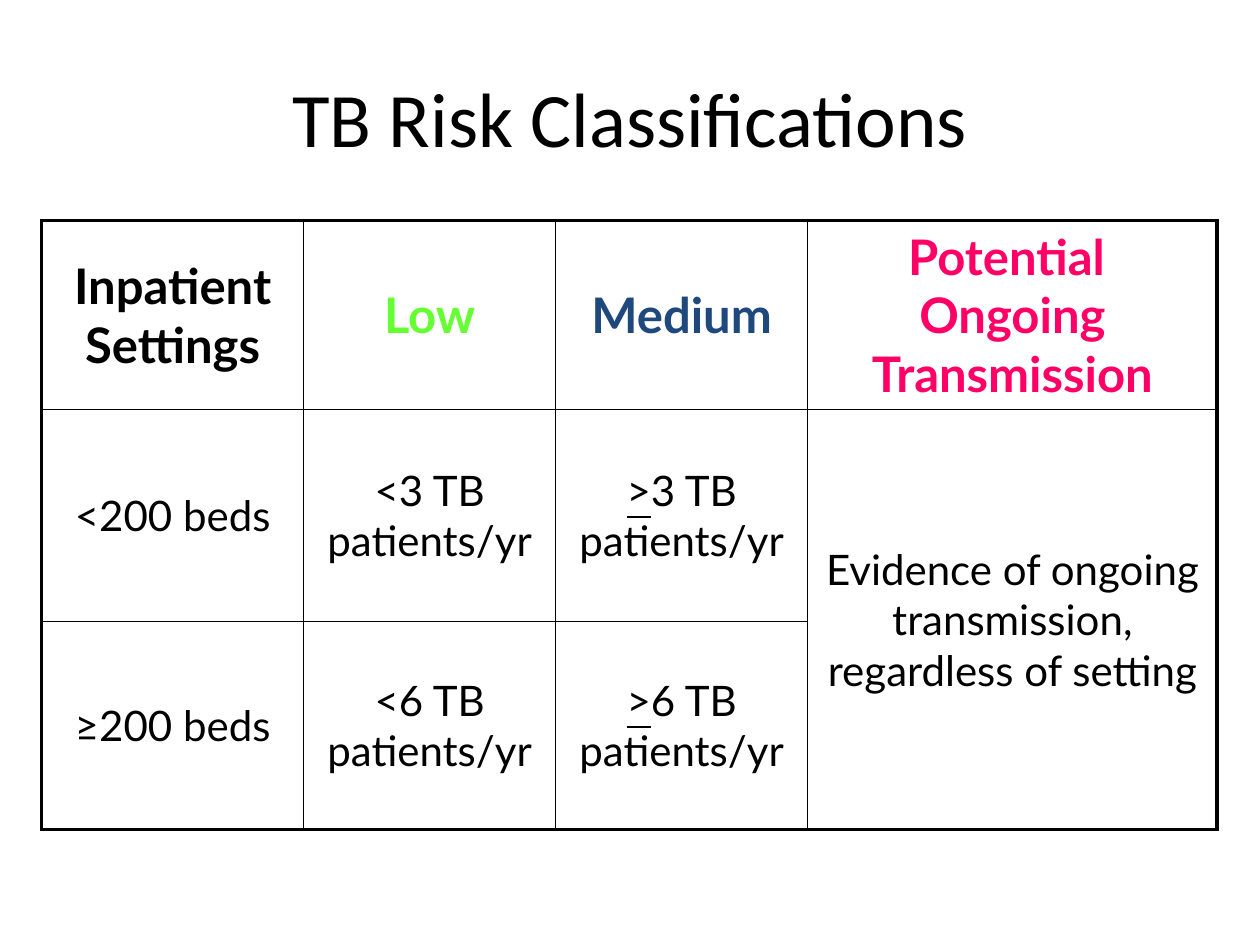
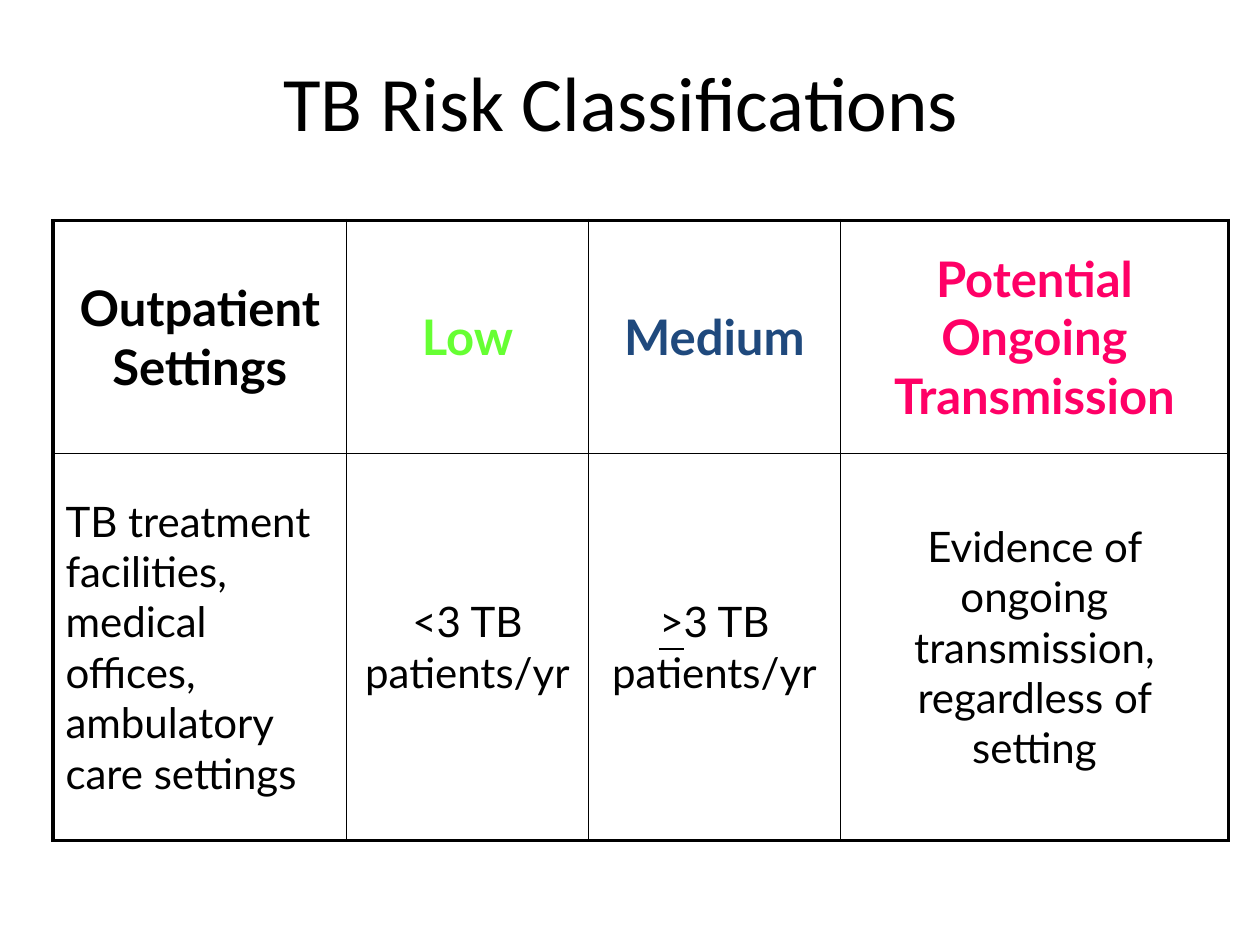
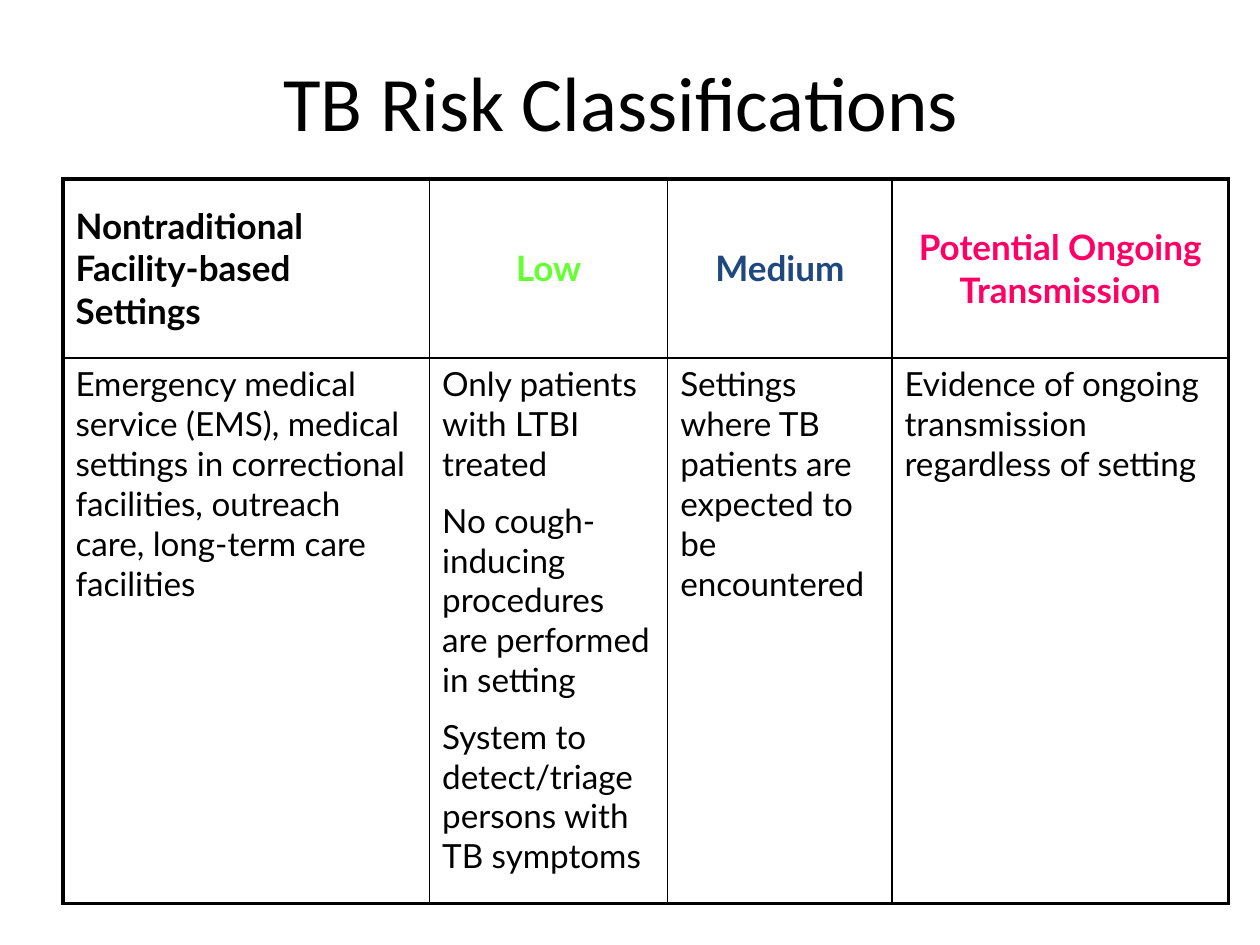
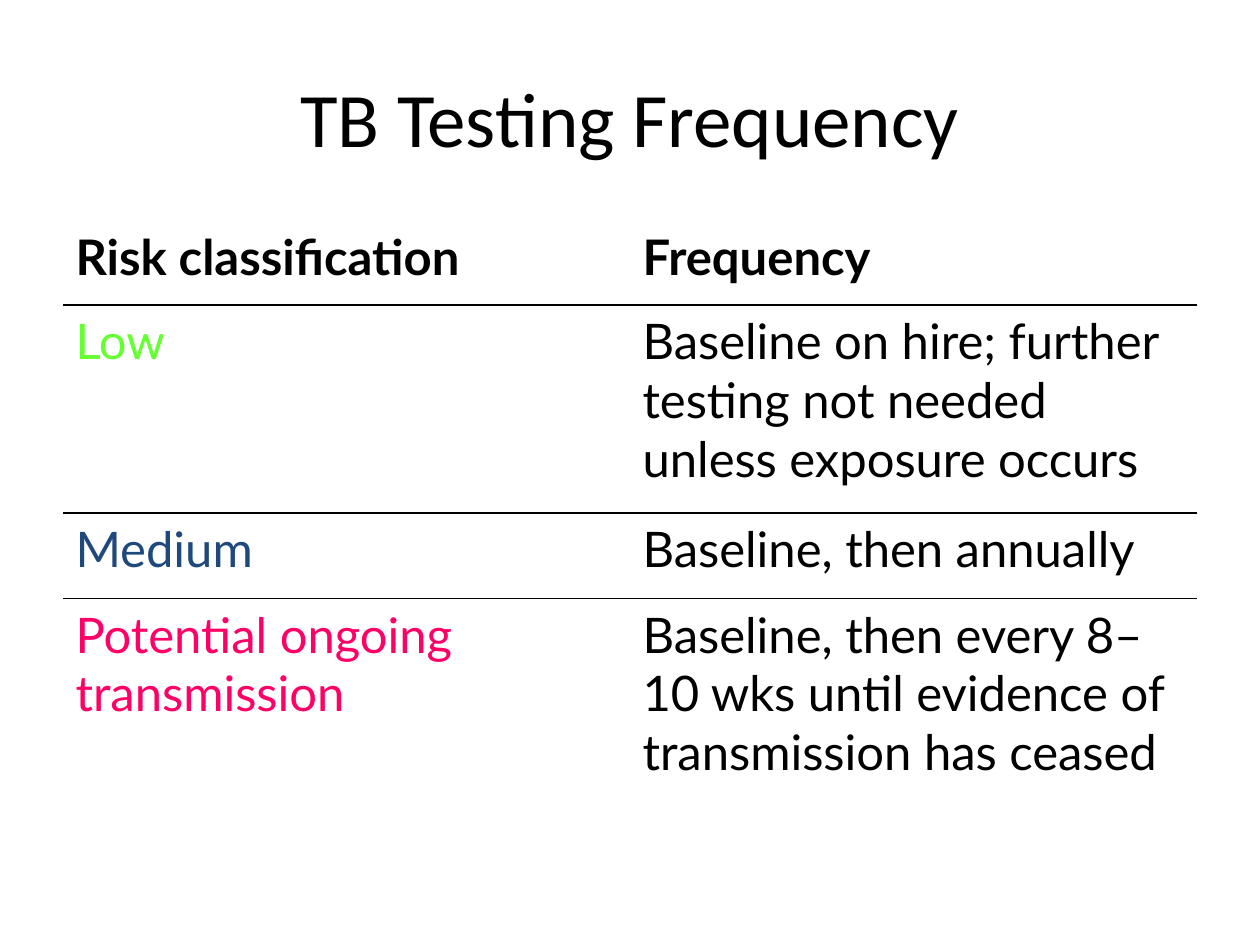
from lxml import etree
from pptx import Presentation
from pptx.dml.color import RGBColor
from pptx.enum.text import MSO_ANCHOR, PP_ALIGN
from pptx.oxml.ns import qn
from pptx.util import Inches, Pt

LEFT, CENTER = PP_ALIGN.LEFT, PP_ALIGN.CENTER
TOP, MIDDLE = MSO_ANCHOR.TOP, MSO_ANCHOR.MIDDLE

WIDE, HIGH = 10, 7.5
UNIT = WIDE / 120  # the grid has 120 columns and 90 rows
BLACK, GREEN, BLUE, PINK = "000000", "66FF33", "1F497D", "FF0066"
HEAD_FONT, BODY_FONT = "Calibri", "Lato"
THIN, THICK = 1, 2.25


def grid(count):
    return Inches(round(count * UNIT, 2))


def paint(target, color):
    target.rgb = RGBColor.from_string(color)


def write(frame, text, size=24, font=BODY_FONT, color=BLACK, bold=False,
          align=CENTER, anchor=MIDDLE, gap=0.5):
    """Fill a frame; text is one paragraph or a list, gap a share of the size."""
    frame.word_wrap = True
    frame.vertical_anchor = anchor
    for i, words in enumerate([text] if isinstance(text, str) else text):
        para = frame.paragraphs[0] if i == 0 else frame.add_paragraph()
        para.alignment = align
        para.space_before = Pt(size * gap if i else 0)
        # A leading ">" is underlined to read "at least".
        parts = [">", words[1:]] if words.startswith(">") else [words]
        for part in parts:
            for j, line in enumerate(part.split("\n")):
                if j:
                    para.add_line_break()
                run = para.add_run()
                run.text = line
                run.font.size = Pt(size)
                run.font.name = font
                run.font.bold = bold
                run.font.underline = part == ">"
                paint(run.font.color, color)


def edge(cell, side, width):
    """Draw one side of a cell; width 0 leaves it open."""
    line = etree.SubElement(cell._tc.get_or_add_tcPr(), qn(f"a:ln{side}"))
    if not width:
        etree.SubElement(line, qn("a:noFill"))
        return
    line.set("w", str(Pt(width)))
    fill = etree.SubElement(line, qn("a:solidFill"))
    etree.SubElement(fill, qn("a:srgbClr")).set("val", BLACK)


def add_title(slide, text, top=3.6):
    box = slide.shapes.add_textbox(grid(6), grid(top), grid(108), grid(15))
    write(box.text_frame, text, size=44, font=HEAD_FONT)


def item(text, **style):
    return text, style


def add_grid(slide, left, top, cols, rows, items, base, frame=THICK, inner=THIN):
    """Add a table; a None item joins its cell to the one above."""
    table = slide.shapes.add_table(
        len(rows), len(cols), grid(left), grid(top),
        grid(sum(cols)), grid(sum(rows))).table
    table.horz_banding = table.first_row = False
    for col, width in zip(table.columns, cols):
        col.width = grid(width)
    for row, height in zip(table.rows, rows):
        row.height = grid(height)
    for r, line in enumerate(items):
        for c, entry in enumerate(line):
            if entry is None:
                table.cell(r - 1, c).merge(table.cell(r, c))
            else:
                text, style = entry
                write(table.cell(r, c).text_frame, text, **{**base, **style})
                table.cell(r, c).vertical_anchor = {**base, **style}.get("anchor", MIDDLE)
    for r in range(len(rows)):
        for c in range(len(cols)):
            cell = table.cell(r, c)
            end = r + (cell.span_height if cell.is_merge_origin else 1)
            above = 0 if cell.is_spanned else THIN
            edge(cell, "L", inner if c else frame)
            edge(cell, "R", inner if c < len(cols) - 1 else frame)
            edge(cell, "T", above if r else frame)
            edge(cell, "B", THIN if end < len(rows) else frame)
            cell.fill.background()


def header(first, last="Potential Ongoing Transmission", size=28, align=CENTER):
    style = dict(size=size, bold=True, anchor=MIDDLE)
    return [item(first, **style, align=align),
            item("Low", **style, color=GREEN, align=CENTER),
            item("Medium", **style, color=BLUE, align=CENTER),
            item(last, **style, color=PINK, align=CENTER)]


def inpatient(slide):
    add_title(slide, "TB Risk Classifications")
    proof = ["Evidence of ongoing transmission,", "regardless of setting"]
    add_grid(slide, 4, 21, [25, 24, 24, 39], [18, 20.2, 19.8], [
        header("Inpatient Settings", "Potential \nOngoing Transmission"),
        [item("<200 beds"), item("<3 TB patients/yr"),
         item(">3 TB patients/yr"), item(proof, gap=0)],
        [item("≥200 beds"), item("<6 TB patients/yr"),
         item(">6 TB patients/yr"), None],
    ], base={})


def outpatient(slide):
    add_title(slide, "TB Risk Classifications ", top=2)
    add_grid(slide, 5, 21, [28, 23, 24, 37], [22.2, 36.8], [
        header("Outpatient Settings"),
        [item("TB treatment facilities, medical offices, "
              "ambulatory care settings", align=LEFT),
         item("<3 TB patients/yr"), item(">3 TB patients/yr"),
         item("Evidence of ongoing transmission, regardless of setting")],
    ], base={})


def other(slide):
    add_title(slide, "TB Risk Classifications ", top=2)
    add_grid(slide, 6, 17, [34.9, 22.7, 21.4, 32], [17, 52], [
        header("Nontraditional Facility-based Settings", size=20, align=LEFT),
        [item("Emergency medical service (EMS), medical settings in "
              "correctional facilities, outreach care, long-term care facilities"),
         item(["Only patients with LTBI treated",
               "No cough-inducing procedures are performed in setting",
               "System to detect/triage persons with TB symptoms"]),
         item("Settings where TB patients are expected to be encountered"),
         item("Evidence of ongoing transmission regardless of setting")],
    ], base=dict(size=19, align=LEFT, anchor=TOP))


def testing(slide):
    add_title(slide, "TB Testing Frequency")
    add_grid(slide, 6, 21, [54, 54], [8, 19.8, 8.2, 19.8], [
        [item("Risk classification", bold=True), item("Frequency", bold=True)],
        [item("Low", color=GREEN),
         item("Baseline on hire; further testing not needed "
              "unless exposure occurs")],
        [item("Medium", color=BLUE), item("Baseline, then annually")],
        [item("Potential ongoing transmission", color=PINK),
         item("Baseline, then every 8–10 wks until evidence of "
              "transmission has ceased")],
    ], base=dict(size=28, align=LEFT, anchor=TOP), frame=0, inner=0)


def main():
    deck = Presentation()
    deck.slide_width, deck.slide_height = Inches(WIDE), Inches(HIGH)
    blank = deck.slide_layouts[6]
    for build in (inpatient, outpatient, other, testing):
        build(deck.slides.add_slide(blank))
    deck.save("out.pptx")


if __name__ == "__main__":
    main()
